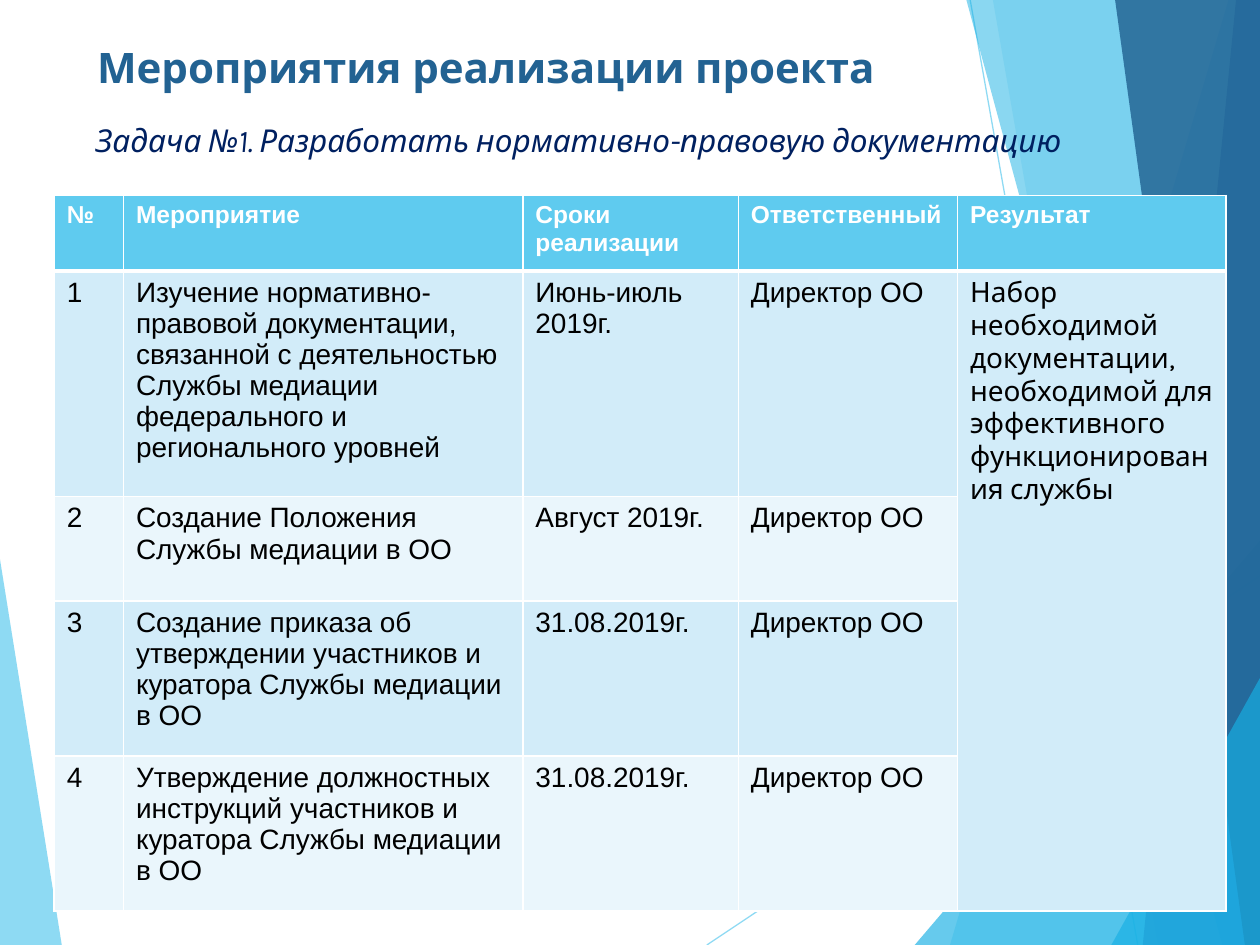
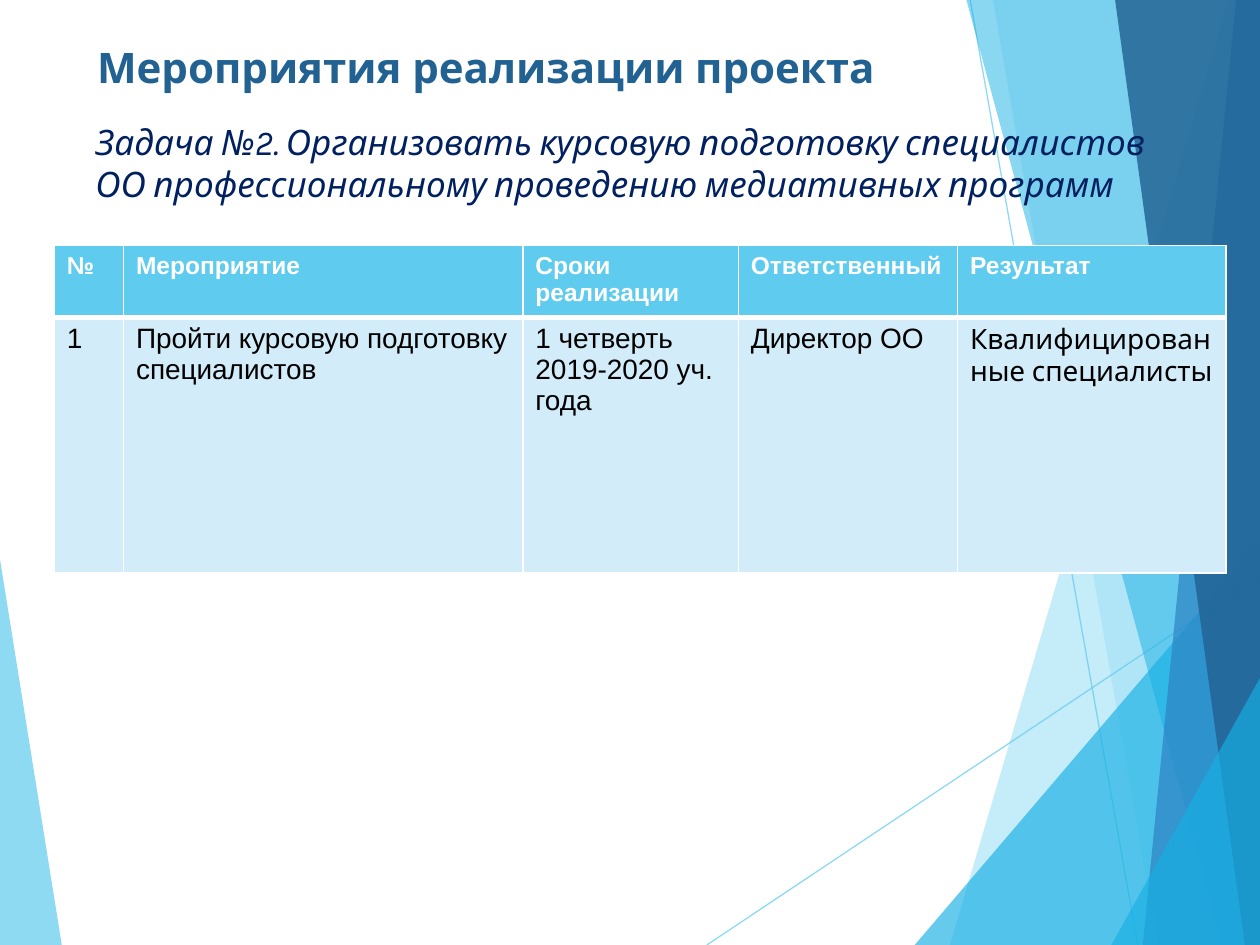
from dataclasses import dataclass

from lxml import etree
from pptx import Presentation
from pptx import util as u
from pptx.dml.color import RGBColor
from pptx.enum import shapes, text
from pptx.oxml import ns


@dataclass(frozen=True)
class Theme:
    sky: str = "5FCBEF"
    cyan: str = "17B0E4"
    blue: str = "2E83C3"
    deep: str = "226292"
    navy: str = "002060"
    white: str = "FFFFFF"
    black: str = "000000"
    bands: tuple = ("D2ECF9", "EAF6FC")
    display: str = "Karla"
    body: str = "Arial"
    title_size: int = 24
    head_size: int = 14
    cell_size: int = 16
    rule: int = 1
    head_rule: int = 3


T = Theme()

TITLE = "Мероприятия реализации проекта"
HEADER = ["№", "Мероприятие", "Сроки реализации", "Ответственный", "Результат"]
DIRECTOR = "Директор ОО"
COLS = [0.55, 3.17, 1.71, 1.74, 2.13]

SLIDES = [
    {
        "task": "Задача №1. Разработать нормативно-правовую документацию",
        "task_size": 18,
        "top": 1.55,
        "heights": [0.6, 1.79, 0.83, 1.23, 1.23],
        "steps": [
            ("Изучение нормативно-правовой документации, связанной с деятельностью "
             "Службы медиации федерального и регионального уровней", "Июнь-июль 2019г."),
            ("Создание Положения Службы медиации в ОО", "Август 2019г."),
            ("Создание приказа об утверждении участников и куратора Службы медиации в ОО",
             "31.08.2019г."),
            ("Утверждение должностных инструкций участников и куратора Службы медиации в ОО",
             "31.08.2019г."),
        ],
        "result": "Набор необходимой документации, необходимой для эффективного "
                  "функционирования службы",
    },
    {
        "task": "Задача №2. Организовать курсовую подготовку специалистов ОО "
                "профессиональному проведению медиативных программ",
        "task_size": 20,
        "top": 1.95,
        "heights": [0.55, 2.03],
        "steps": [("Пройти курсовую подготовку специалистов", "1 четверть 2019-2020 уч. года")],
        "result": "Квалифицированные специалисты",
    },
]

LEFT_FACET = ([(0, 4.44), (0.49, 7.5), (0, 7.5)], T.sky, 70)
RAYS = [((5.61, 7.5), (10, 4.57)), ((7.7, 0), (9.03, 7.5))]
RIGHT_FACETS = [
    ([(9.75, 0), (7.54, 7.5), (10, 7.5), (10, 0)], T.sky, 36),
    ([(7.88, 0), (9.19, 7.5), (10, 7.5), (10, 0)], T.sky, 20),
    ([(7.26, 7.5), (10, 4.29), (10, 7.5)], T.cyan, 66),
    ([(7.67, 0), (9.7, 7.5), (10, 7.5), (10, 0)], T.cyan, 50),
    ([(9.81, 0), (9.07, 7.5), (10, 7.5), (10, 0)], T.blue, 70),
    ([(8.85, 0), (9.88, 7.5), (10, 7.5), (10, 0)], T.deep, 82),
    ([(8.82, 7.5), (10, 5.38), (10, 7.5)], T.cyan, 66),
]


def rgb(color):
    return RGBColor.from_string(color)


def set_alpha(sp, percent):
    clr = next(sp.element.spPr.iter(ns.qn("a:srgbClr")))
    etree.SubElement(clr, ns.qn("a:alpha")).set("val", str(percent * 1000))


def style_text(tf, font, size, color, bold=False, italic=False):
    for p in tf.paragraphs:
        p.alignment = text.PP_ALIGN.LEFT
        for r in p.runs:
            f = r.font
            f.name, f.size, f.bold, f.italic = font, u.Pt(size), bold, italic
            f.color.rgb = rgb(color)


def add_facet(s, points, color, alpha):
    pts = [(u.Inches(x), u.Inches(y)) for x, y in points]
    fb = s.shapes.build_freeform(*pts[0])
    fb.add_line_segments(pts[1:], close=True)
    sp = fb.convert_to_shape()
    sp.shadow.inherit = False
    sp.fill.solid()
    sp.fill.fore_color.rgb = rgb(color)
    sp.line.fill.background()
    set_alpha(sp, alpha)
    return sp


def add_ray(s, start, end):
    sp = s.shapes.add_connector(shapes.MSO_CONNECTOR.STRAIGHT,
                                *(u.Inches(v) for v in start + end))
    sp.line.color.rgb = rgb(T.sky)
    sp.line.width = u.Pt(0.75)
    etree.SubElement(sp.element.spPr, ns.qn("a:effectLst"))
    set_alpha(sp, 70)
    return sp


def move_facets_to_layout(s, layout):
    parts = [add_facet(s, *LEFT_FACET)]
    parts += [add_ray(s, *ray) for ray in RAYS]
    parts += [add_facet(s, *facet) for facet in RIGHT_FACETS]
    for i, sp in enumerate(parts):
        next(sp.element.iter(ns.qn("p:cNvPr"))).set("id", str(100 + i))
        layout.shapes.element.insert(2 + i, sp.element)


def set_borders(cell, widths):
    tc_pr = cell._tc.get_or_add_tcPr()
    for i, (side, width) in enumerate(widths.items()):
        ln = etree.Element(ns.qn(f"a:ln{side}"), w=str(u.Pt(width)))
        fill = etree.SubElement(ln, ns.qn("a:solidFill"))
        etree.SubElement(fill, ns.qn("a:srgbClr")).set("val", T.white)
        tc_pr.insert(i, ln)


def add_plan(s, top, heights, steps, result):
    rows = [HEADER] + [[str(n), step, term, DIRECTOR, result if n == 1 else ""]
                       for n, (step, term) in enumerate(steps, 1)]
    frame = s.shapes.add_table(len(rows), len(COLS), u.Inches(0.43), u.Inches(top),
                               u.Inches(sum(COLS)), u.Inches(sum(heights)))
    table = frame.table
    for col, width in zip(table.columns, COLS):
        col.width = u.Inches(width)
    for row, height in zip(table.rows, heights):
        row.height = u.Inches(height)
    last = len(COLS) - 1
    for i, values in enumerate(rows):
        for j, value in enumerate(values):
            cell = table.cell(i, j)
            cell.text_frame.text = value
            cell.fill.solid()
            band = T.bands[0 if j == last else (i - 1) % 2]
            cell.fill.fore_color.rgb = rgb(band if i else T.sky)
            if i:
                font = T.display if j == last else T.body
                style_text(cell.text_frame, font, T.cell_size, T.black)
            else:
                style_text(cell.text_frame, T.body, T.head_size, T.white, bold=True)
            set_borders(cell, {"L": T.rule, "R": T.rule,
                               "T": T.head_rule if i == 1 else T.rule,
                               "B": T.rule if i else T.head_rule})
    if len(steps) > 1:
        table.cell(1, last).merge(table.cell(len(steps), last))


def add_heading(s, task, size):
    title = s.shapes.title
    title.left, title.top, title.width, title.height = (
        u.Inches(v) for v in (0.67, 0.28, 6.94, 0.63))
    title.text_frame.text = TITLE
    title.text_frame.vertical_anchor = text.MSO_ANCHOR.TOP
    style_text(title.text_frame, T.display, T.title_size, T.deep, bold=True)

    box = s.shapes.add_textbox(*(u.Inches(v) for v in (0.66, 0.91, 8.67, 1)))
    tf = box.text_frame
    tf.word_wrap = True
    tf.text = task
    tf.paragraphs[0].space_before = u.Pt(10)
    style_text(tf, T.display, size, T.navy, italic=True)


def main():
    prs = Presentation()
    prs.slide_width, prs.slide_height = u.Inches(10), u.Inches(7.5)
    layout = prs.slide_layouts[5]
    for n, plan in enumerate(SLIDES):
        s = prs.slides.add_slide(layout)
        if n == 0:
            move_facets_to_layout(s, layout)
        add_heading(s, plan["task"], plan["task_size"])
        add_plan(s, plan["top"], plan["heights"], plan["steps"], plan["result"])
    prs.save("out.pptx")


if __name__ == "__main__":
    main()
